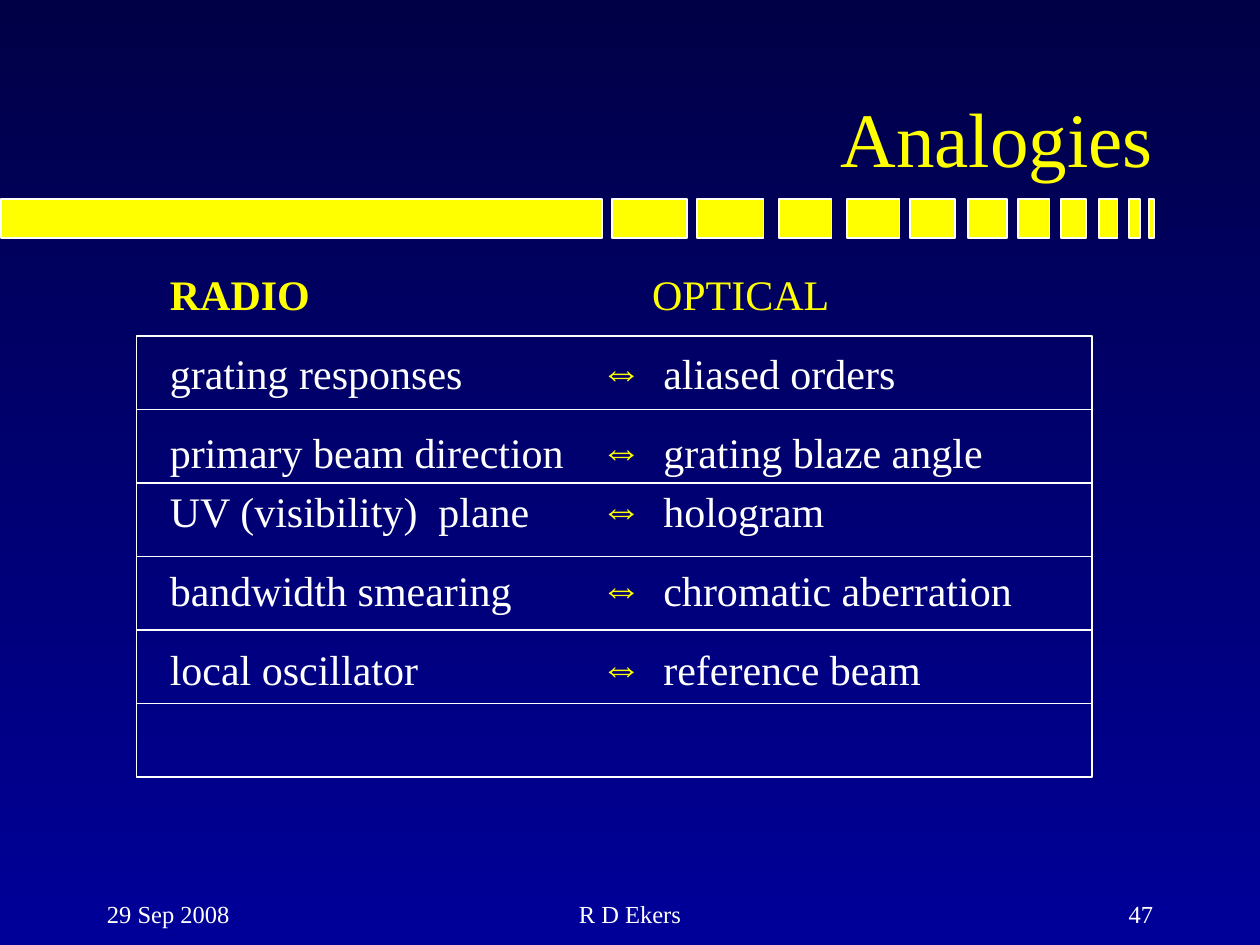
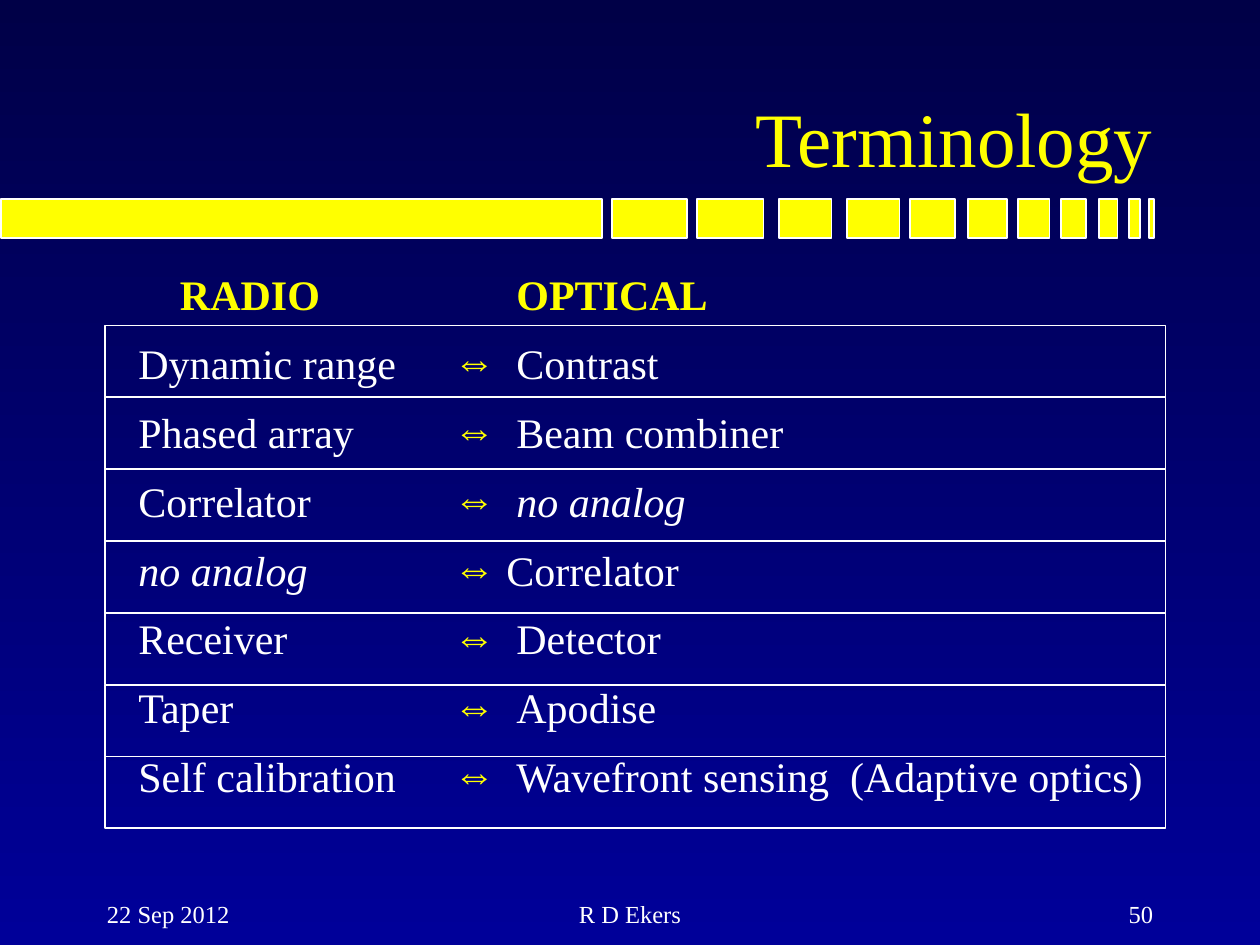
from lxml import etree
from pptx import Presentation
from pptx.dml.color import RGBColor
from pptx.enum.shapes import MSO_SHAPE
from pptx.enum.text import MSO_ANCHOR, PP_ALIGN
from pptx.oxml.ns import qn
from pptx.util import Inches, Pt

RECT = MSO_SHAPE.RECTANGLE
LEFT, CENTER, RIGHT = PP_ALIGN.LEFT, PP_ALIGN.CENTER, PP_ALIGN.RIGHT
BOTTOM = MSO_ANCHOR.BOTTOM

HEX = {"night": "000047", "blue": "000099", "yellow": "FFFF00", "white": "FFFFFF"}
COLOR = {name: RGBColor.from_string(value) for name, value in HEX.items()}
FONT = "Times New Roman"
ARROW = "⇔"

prs = Presentation()
prs.slide_width, prs.slide_height = Inches(10), Inches(7.5)
CELL = prs.slide_width / 120  # the slide is a grid of 120 columns and 90 rows


def grid(*cells):
    return [round(cell * CELL) for cell in cells]


def write(paragraph, text, size, color, align=LEFT, bold=False, italic=False):
    paragraph.alignment = align
    run = paragraph.add_run()
    run.text = text
    style = {"name": FONT, "size": Pt(size), "bold": bold, "italic": italic}
    for attribute, value in style.items():
        setattr(run.font, attribute, value)
    run.font.color.rgb = COLOR[color]


# Shared design: left and width of each yellow bar, in inches
BARS = [(0.01, 4.77), (4.86, 0.59), (5.53, 0.53), (6.18, 0.42), (6.72, 0.42), (7.22, 0.36),
        (7.68, 0.31), (8.08, 0.25), (8.42, 0.2), (8.72, 0.15), (8.96, 0.09), (9.12, 0.04)]
BAR_TOP, BAR_HEIGHT = 1.58, 0.31
TITLE_AREA = (9, 2.5, 102, 15.5)
FOOTER_AREAS = [(9, 25, LEFT), (41, 38, CENTER), (86, 25, RIGHT)]
FOOTER_TOP, FOOTER_HEIGHT = 85, 6
TEXT_TOP, TEXT_HEIGHT = 25, 54
ITEM_INDENT, ARROW_TEXT_INDENT = 0.5, 1
ITEM_GAP = 4.8  # points, 20% of the text size

# Columns: left, width, heading, heading indent, heading bold, has arrows, items
SLIDES = [
    {
        "title": "Analogies",
        "footer": ["29 Sep 2008", "R D Ekers", "47"],
        "frame": (13, 32, 91, 42),
        "spacing": [1.4, 1.4, 1, 1.4, 1.4],
        "rows": 6,
        "columns": [
            (9, 55, "RADIO", 0.5, True, False,
             ["grating responses", "primary beam direction", "UV (visibility)  plane",
              "bandwidth smearing", "local oscillator"]),
            (50, 50, "OPTICAL", 0.91, False, True,
             ["aliased orders", "grating blaze angle", "hologram",
              "chromatic aberration", "reference beam"]),
        ],
    },
    {
        "title": "Terminology",
        "footer": ["22 Sep 2012", "R D Ekers", "50"],
        "frame": (10, 31, 101, 47.9),
        "spacing": [1.2] * 7,
        "rows": 7,
        "columns": [
            (6, 45, "RADIO", 0.83, True, False,
             ["Dynamic range", "Phased array", "Correlator", "no analog",
              "Receiver", "Taper", "Self calibration"]),
            (36, 75, "OPTICAL", 1, True, True,
             ["Contrast", "Beam combiner", "no analog", "Correlator", "Detector",
              "Apodise", "Wavefront sensing  (Adaptive optics)"]),
        ],
    },
]

background = prs.slide_master.background.fill
background.gradient()
background.gradient_angle = 270
for stop, shade in zip(background.gradient_stops, ("night", "blue")):
    stop.color.rgb = COLOR[shade]

for content in SLIDES:
    slide = prs.slides.add_slide(prs.slide_layouts[5])
    shapes = slide.shapes

    for left, width in BARS:
        bar = shapes.add_shape(RECT, *map(Inches, (left, BAR_TOP, width, BAR_HEIGHT)))
        bar.shadow.inherit = False
        bar.fill.solid()
        bar.fill.fore_color.rgb = COLOR["yellow"]
        bar.line.color.rgb = COLOR["white"]
        bar.line.width = Pt(1)

    for (left, width, align), text in zip(FOOTER_AREAS, content["footer"]):
        footer = shapes.add_textbox(*grid(left, FOOTER_TOP, width, FOOTER_HEIGHT)).text_frame
        footer.word_wrap = True
        write(footer.paragraphs[0], text, 14, "white", align)

    title = shapes.title
    title.left, title.top, title.width, title.height = grid(*TITLE_AREA)
    title.text_frame.vertical_anchor = BOTTOM
    write(title.text_frame.paragraphs[0], content["title"], 44, "yellow", RIGHT)

    for left, width, heading, heading_indent, bold, arrows, items in content["columns"]:
        column = shapes.add_textbox(*grid(left, TEXT_TOP, width, TEXT_HEIGHT)).text_frame
        column.word_wrap = True
        header = column.paragraphs[0]
        header._p.get_or_add_pPr().set("marL", str(Inches(heading_indent)))
        write(header, heading, 24, "yellow", bold=bold)

        for item, spacing in zip(items, content["spacing"]):
            line = column.add_paragraph()
            line.line_spacing = spacing
            line.space_before = Pt(ITEM_GAP)
            props = line._p.get_or_add_pPr()
            indent = ITEM_INDENT
            if arrows:
                # The lone term without a counterpart sits closer to its arrow
                indent = 0.92 if item == "Correlator" else ARROW_TEXT_INDENT
                props.set("indent", str(Inches(ITEM_INDENT) - Inches(indent)))
                bullet_color = etree.SubElement(props, qn("a:buClr"))
                etree.SubElement(bullet_color, qn("a:srgbClr"), val=HEX["yellow"])
                etree.SubElement(props, qn("a:buFont"), typeface=FONT)
                etree.SubElement(props, qn("a:buChar"), char=ARROW)
            props.set("marL", str(Inches(indent)))
            write(line, item, 24, "white", italic=item == "no analog")

    left, top, width, height = content["frame"]
    row_height = height / content["rows"]
    for row in range(content["rows"]):
        frame = shapes.add_shape(RECT, *grid(left, top + row * row_height, width, row_height))
        frame.shadow.inherit = False
        frame.fill.background()
        frame.line.color.rgb = COLOR["white"]
        frame.line.width = Pt(1)

prs.save("out.pptx")
